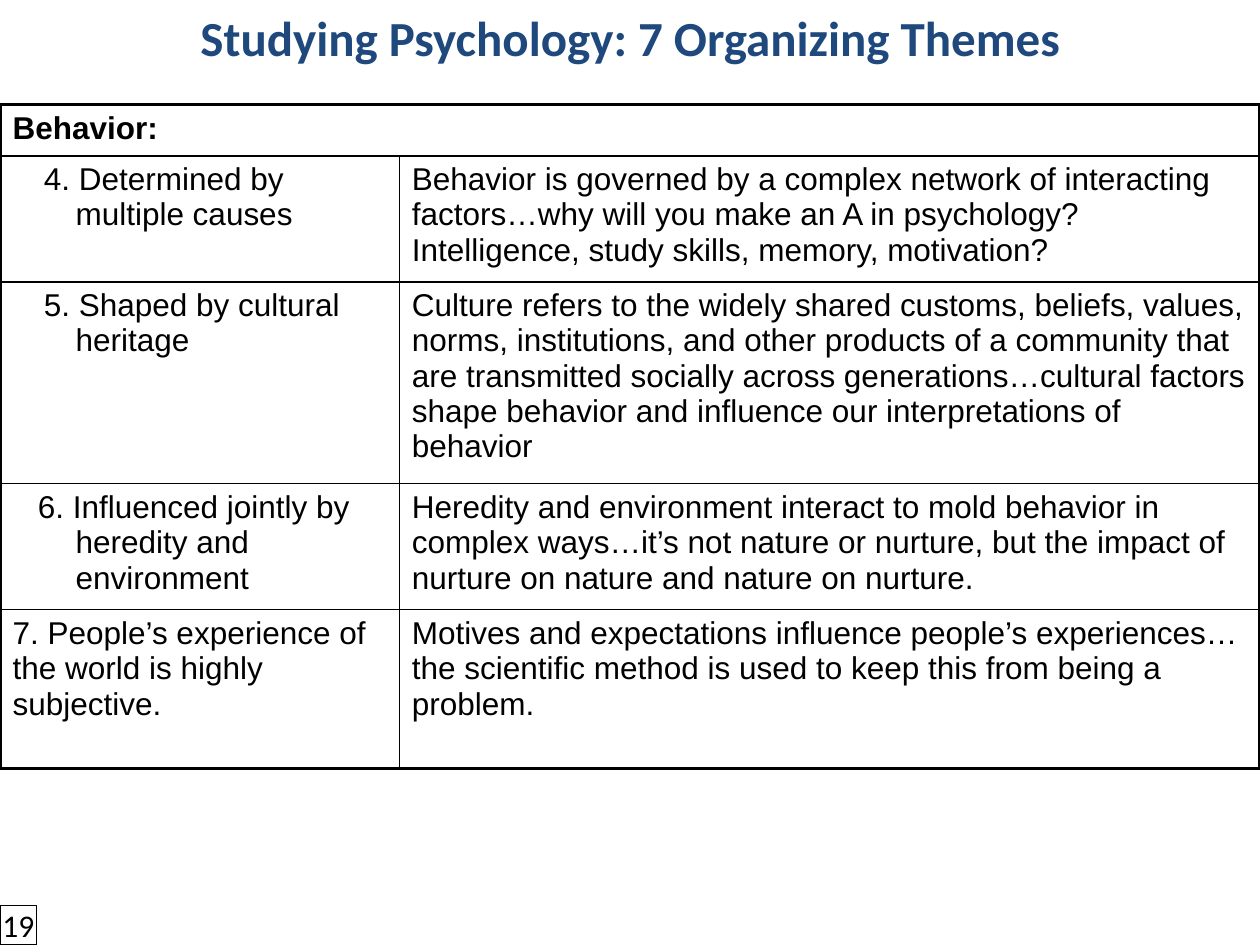
"""Build the slide on the organizing themes of psychology, 4 to 7."""
from lxml import etree
from pptx import Presentation
from pptx import util as u
from pptx.dml import color
from pptx.enum import shapes, text
from pptx.oxml import ns

COLORS = {"title": "1F497D", "ink": "000000"}
ROWS = [
    (1.03, "Behavior:", "", None),
    (2.54, "4. Determined by multiple causes",
     "Behavior is governed by a complex network of interacting factors…why will you "
     "make an A in psychology? Intelligence, study skills, memory, motivation?", 0.64),
    (4.07, "5. Shaped by cultural heritage",
     "Culture refers to the widely shared customs, beliefs, values, norms, institutions, "
     "and other products of a community that are transmitted socially across "
     "generations…cultural factors shape behavior and influence our interpretations of "
     "behavior", 0.64),
    (2.54, "6. Influenced jointly by heredity and environment",
     "Heredity and environment interact to mold behavior in complex ways…it’s not nature "
     "or nurture, but the impact of nurture on nature and nature on nurture.", 0.76),
    (3.2, "7. People’s experience of the world is highly subjective.",
     "Motives and expectations influence people’s experiences…the scientific method is "
     "used to keep this from being a problem.", None),
]


def style(p, ink, **fmt):
    for r in p.runs:
        for name, value in fmt.items():
            setattr(r.font, name, value)
        r.font.color.rgb = color.RGBColor.from_string(COLORS[ink])


def add_border(cell, side, width):
    ln = etree.SubElement(cell._tc.get_or_add_tcPr(), ns.qn(f"a:ln{side}"), w=str(u.Pt(width)))
    fill = etree.SubElement(ln, ns.qn("a:solidFill"))
    etree.SubElement(fill, ns.qn("a:srgbClr"), val=COLORS["ink"])


prs = Presentation()
prs.slide_width, prs.slide_height = u.Cm(25.4), u.Cm(19.05)
s = prs.slides.add_slide(prs.slide_layouts[5])

title = s.shapes.title
box = {"left": 0, "top": 0, "width": prs.slide_width, "height": u.Cm(1.47)}
for name, value in box.items():
    setattr(title, name, value)
tf = title.text_frame
tf.text = "Studying Psychology: 7 Organizing Themes"
tf.vertical_anchor = text.MSO_ANCHOR.MIDDLE
tf.paragraphs[0].alignment = text.PP_ALIGN.CENTER
style(tf.paragraphs[0], "title", name="Calibri", size=u.Pt(28), bold=True)

height = u.Cm(sum(row[0] for row in ROWS))
table = s.shapes.add_table(len(ROWS), 2, 0, u.Cm(2.11), prs.slide_width, height).table
table.first_row = table.horz_banding = False
table.columns[0].width = u.Cm(8.05)
table.columns[1].width = prs.slide_width - u.Cm(8.05)
table.cell(0, 0).merge(table.cell(0, 1))

last = len(ROWS) - 1
for i, (row_height, theme, detail, hanging) in enumerate(ROWS):
    table.rows[i].height = u.Cm(row_height)
    for j, content in enumerate((theme, detail)):
        cell = table.cell(i, j)
        if content:
            cell.text = content
            p = cell.text_frame.paragraphs[0]
            p.space_before = u.Pt(3.6)
            style(p, "ink", name="Arial", size=u.Pt(18), bold=i == 0)
            if j == 0 and hanging:
                p.level = 1
                pPr = p._p.get_or_add_pPr()
                pPr.set("marL", str(u.Cm(1.27)))
                pPr.set("indent", str(-u.Cm(hanging)))
        outer = {"L": j == 0, "R": j == 1 or i == 0, "T": i == 0, "B": i == last}
        for side, is_outer in outer.items():
            add_border(cell, side, 2.25 if is_outer else 1)
        cell.fill.background()

sp = s.shapes.add_shape(shapes.MSO_SHAPE.RECTANGLE, 0, u.Cm(18.26), u.Cm(0.74), u.Cm(0.79))
sp.shadow.inherit = False
sp.fill.background()
sp.line.color.rgb = color.RGBColor.from_string(COLORS["ink"])
sp.line.width = u.Pt(0.75)
tf = sp.text_frame
frame = {"margin_left": 0, "margin_top": 0, "margin_right": 0, "margin_bottom": 0,
         "word_wrap": False, "auto_size": text.MSO_AUTO_SIZE.SHAPE_TO_FIT_TEXT}
for name, value in frame.items():
    setattr(tf, name, value)
tf.text = "19"
tf.paragraphs[0].alignment = text.PP_ALIGN.CENTER
style(tf.paragraphs[0], "ink", name="Calibri", size=u.Pt(18))

prs.save("out.pptx")
